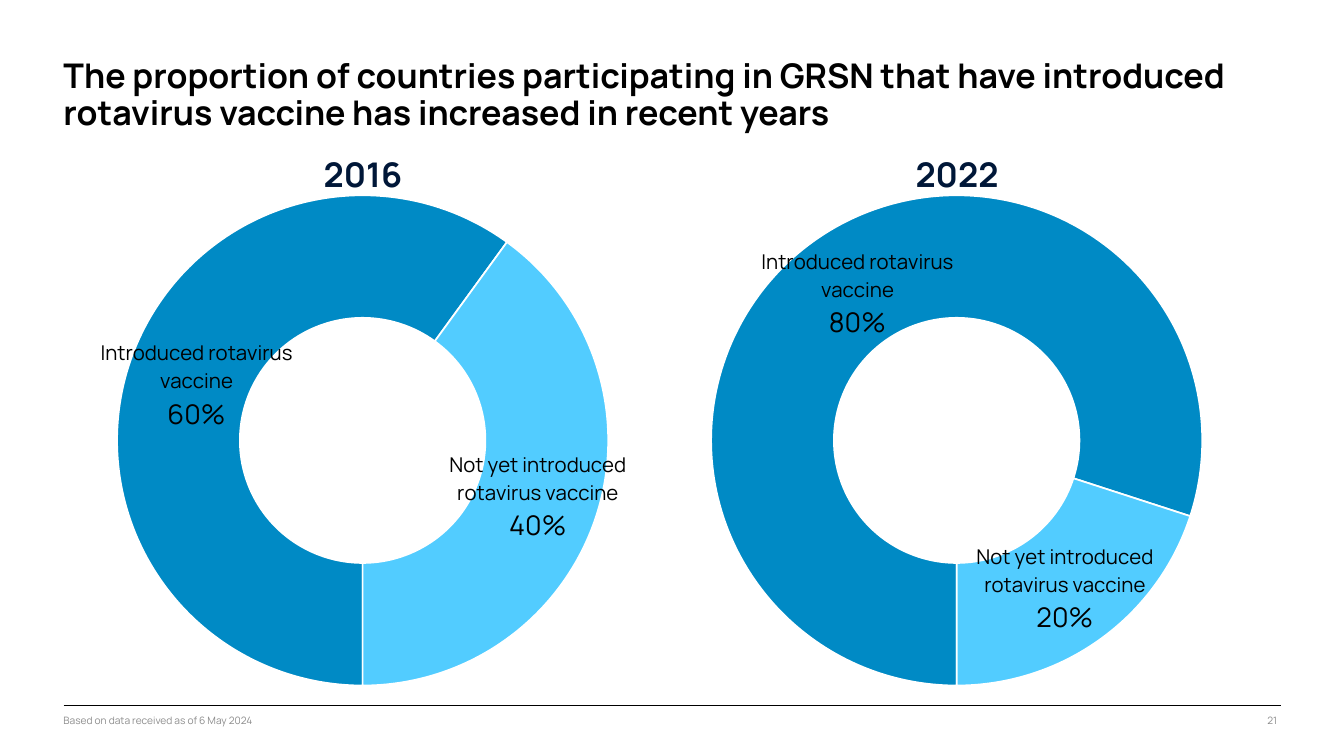
"""Build a slide comparing rotavirus vaccine introduction in 2016 and 2022."""
from dataclasses import dataclass

from lxml import etree
from pptx import Presentation
from pptx.chart.data import CategoryChartData
from pptx.dml.color import RGBColor
from pptx.enum.chart import XL_CHART_TYPE, XL_LABEL_POSITION
from pptx.enum.shapes import MSO_CONNECTOR
from pptx.enum.text import PP_ALIGN
from pptx.oxml.ns import qn
from pptx.util import Cm, Pt

DOUGHNUT = XL_CHART_TYPE.DOUGHNUT
STRAIGHT = MSO_CONNECTOR.STRAIGHT
LEFT, CENTER, RIGHT = PP_ALIGN.LEFT, PP_ALIGN.CENTER, PP_ALIGN.RIGHT

FONT = "Manrope"
COLORS = {
    "text": "000000",
    "heading": "001738",
    "muted": "8C8C8C",
    "introduced": "008AC5",
    "pending": "52CCFF",
    "gap": "FFFFFF",
}
CATEGORIES = ("Introduced rotavirus vaccine", "Not yet introduced rotavirus vaccine")
SLICE_COLORS = ("introduced", "pending")
PLOT_LAYOUT = {
    "layoutTarget": "inner", "xMode": "edge", "yMode": "edge",
    "x": 0.06, "y": 0, "w": 0.86, "h": 0.99,
}
LABEL_SHIFT = {"x": 0.015, "y": 0.005}


@dataclass(frozen=True)
class YearPanel:
    year: str
    shares: tuple[float, float]
    heading_left: float
    chart_left: float


PANELS = (
    YearPanel("2016", (0.6, 0.4), 3.45, 2.74),
    YearPanel("2022", (0.8, 0.2), 28.14, 27.43),
)


def color(name: str) -> RGBColor:
    return RGBColor.from_string(COLORS[name])


def style_font(font, size: float, tint: str = "text", bold: bool = False) -> None:
    font.name = FONT
    font.size = Pt(size)
    font.bold = bold
    font.color.rgb = color(tint)


def add_text(page, text: str, *, left: float, top: float, width: float,
             height: float, size: float, tint: str = "text", bold: bool = False,
             align=LEFT, spacing: float = 1.0) -> None:
    box = page.shapes.add_textbox(Cm(left), Cm(top), Cm(width), Cm(height))
    frame = box.text_frame
    frame.word_wrap = True
    frame.margin_left = frame.margin_right = 0
    frame.margin_top = frame.margin_bottom = 0
    para = frame.paragraphs[0]
    para.alignment = align
    para.line_spacing = spacing
    span = para.add_run()
    span.text = text
    style_font(span.font, size, tint, bold)


def set_layout(parent, index: int, values: dict) -> None:
    for old in parent.findall(qn("c:layout")):
        parent.remove(old)
    layout = etree.Element(qn("c:layout"))
    manual = etree.SubElement(layout, qn("c:manualLayout"))
    for tag, value in values.items():
        etree.SubElement(manual, qn(f"c:{tag}")).set("val", str(value))
    parent.insert(index, layout)


def label_slice(point, category: str, share: float) -> None:
    frame = point.data_label.text_frame
    frame.word_wrap = True
    for number, (text, size) in enumerate(((category, 24), (f"{share:.0%}", 32))):
        para = frame.add_paragraph() if number else frame.paragraphs[0]
        span = para.add_run()
        span.text = text
        style_font(span.font, size)


def add_doughnut(page, panel: YearPanel) -> None:
    data = CategoryChartData(number_format="0%")
    data.categories = CATEGORIES
    data.add_series("Series 1", panel.shares)
    chart = page.shapes.add_chart(
        DOUGHNUT, Cm(panel.chart_left), Cm(8.08), Cm(25.17), Cm(20.62), data).chart
    chart.has_legend = False
    chart.has_title = False
    style_font(chart.font, 10)

    plot = chart.plots[0]
    plot.vary_by_categories = True
    series = plot.series[0]
    labels = series.data_labels
    labels.show_value = True
    labels.show_category_name = True
    labels.number_format = "0%"
    labels.number_format_is_linked = False
    style_font(labels.font, 24)
    for index, (category, share, tint) in enumerate(
            zip(CATEGORIES, panel.shares, SLICE_COLORS)):
        point = series.points[index]
        point.format.fill.solid()
        point.format.fill.fore_color.rgb = color(tint)
        point.format.line.color.rgb = color("gap")
        point.format.line.width = Pt(2)
        label_slice(point, category, share)

    root = chart.element
    set_layout(root.find(f".//{qn('c:plotArea')}"), 0, PLOT_LAYOUT)
    set_layout(root.find(f".//{qn('c:dLbl')}"), 1, LABEL_SHIFT)
    root.find(f".//{qn('c:firstSliceAng')}").set("val", "180")
    root.find(f".//{qn('c:holeSize')}").set("val", "31")


def add_footer_rule(page) -> None:
    rule = page.shapes.add_connector(STRAIGHT, Cm(2.64), Cm(29.31), Cm(53.23), Cm(29.31))
    rule.line.color.rgb = color("text")
    rule.line.width = Pt(0.75)
    etree.SubElement(rule.element.spPr, qn("a:effectLst"))


def main() -> None:
    deck = Presentation()
    deck.slide_width, deck.slide_height = Cm(55.86), Cm(31.42)
    page = deck.slides.add_slide(deck.slide_layouts[6])

    add_footer_rule(page)
    add_text(page, "21", left=48.97, top=29.69, width=4.11, height=0.51,
             size=12, tint="muted", align=RIGHT)
    add_text(page, "The proportion of countries participating in GRSN that have "
             "introduced rotavirus vaccine has increased in recent years",
             left=2.64, top=2.46, width=50.44, height=3.1,
             size=40, bold=True, spacing=0.9)
    for panel in PANELS:
        add_text(page, panel.year, left=panel.heading_left, top=6.38, width=23.27,
                 height=1.7, size=40, tint="heading", bold=True, align=CENTER)
        add_doughnut(page, panel)
    add_text(page, "Based on data received as of 6 May 2024", left=2.64, top=29.69,
             width=46, height=0.51, size=12, tint="muted")

    deck.save("out.pptx")


if __name__ == "__main__":
    main()
